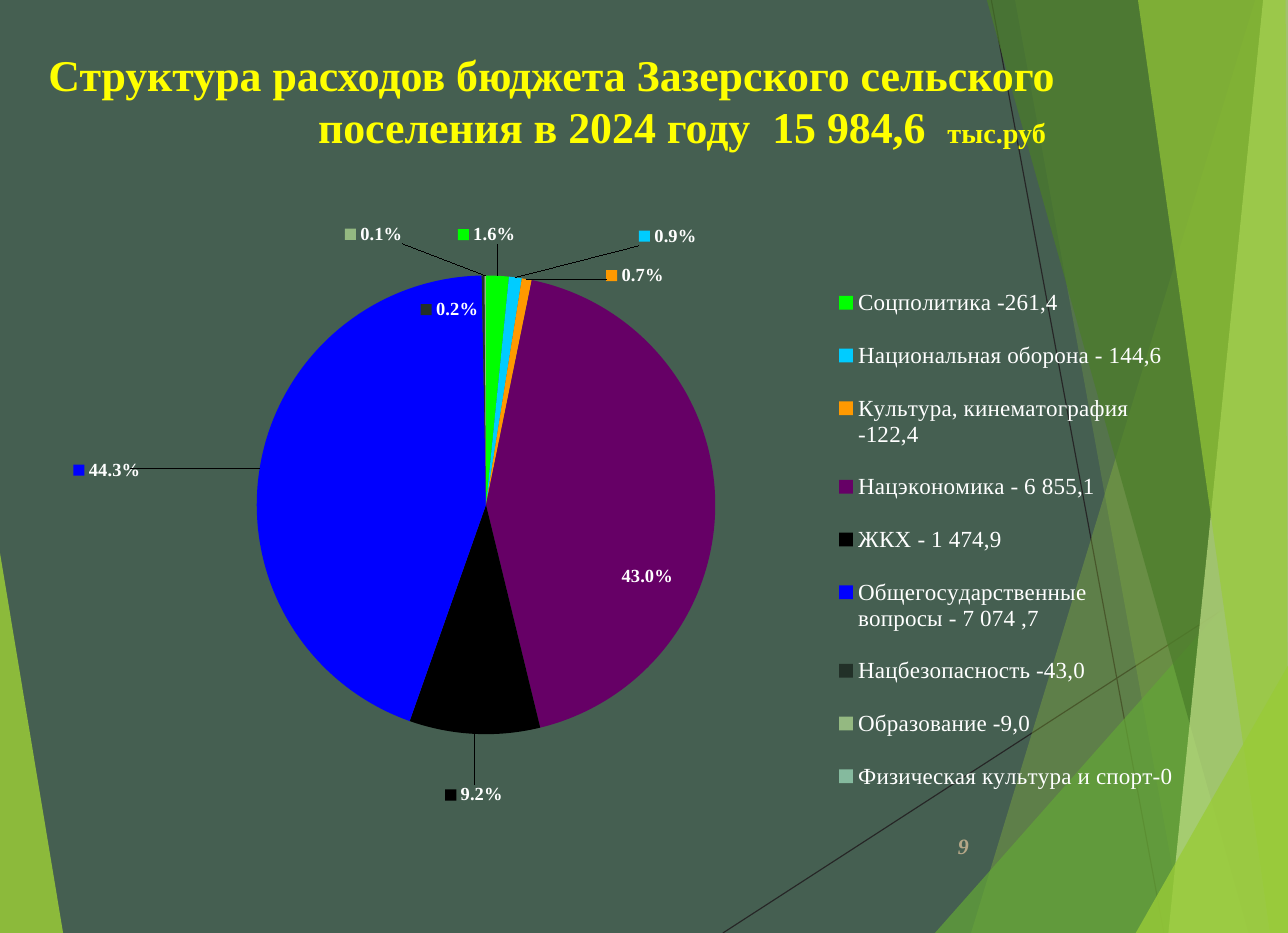
from dataclasses import dataclass

from lxml import etree
from pptx import Presentation
from pptx.chart.data import CategoryChartData
from pptx.dml.color import RGBColor
from pptx.enum import chart as ch, shapes, text
from pptx.oxml import ns, parse_xml
from pptx.util import Inches, Pt


@dataclass(frozen=True)
class Theme:
    font: str = "Times New Roman"
    back: str = "455F51"
    title: str = "FFFF00"
    body: str = "FFFFFF"
    number: str = "B5A788"
    line: str = "262626"
    title_size: float = 28
    unit_size: float = 18
    legend_size: float = 14.7
    label_size: float = 11.8
    number_size: float = 14


THEME = Theme()
WIDTH, HEIGHT = 11.42, 8.27

# Colour, opacity in percent, corners in inches
FACETS = [
    ("99CB38", 85, [(0, 4.9), (0.56, HEIGHT), (0, HEIGHT)]),
    ("99CB38", 30, [(11.13, 0), (8.61, HEIGHT), (WIDTH, HEIGHT), (WIDTH, 0)]),
    ("99CB38", 20, [(9, 0), (10.5, HEIGHT), (WIDTH, HEIGHT), (WIDTH, 0)]),
    ("63A537", 72, [(8.29, HEIGHT), (WIDTH, 4.73), (WIDTH, HEIGHT)]),
    ("4A7C29", 70, [(8.75, 0), (11.07, HEIGHT), (WIDTH, HEIGHT), (WIDTH, 0)]),
    ("C2E088", 70, [(11.2, 0), (10.36, HEIGHT), (WIDTH, HEIGHT), (WIDTH, 0)]),
    ("99CB38", 65, [(10.09, 0), (11.26, HEIGHT), (WIDTH, HEIGHT), (11.4, 0)]),
    ("99CB38", 80, [(10.07, HEIGHT), (WIDTH, 5.9), (WIDTH, HEIGHT)]),
]
RAYS = [((6.41, HEIGHT), (WIDTH, 5.03)), ((8.79, 0), (10.32, HEIGHT))]

# Name, share, colour, label shift as a part of the chart, key beside label
EXPENSES = [
    ("Соцполитика -261,4", 0.016, "00FF00", (-0.01, -0.04), 1),
    ("Национальная оборона - 144,6", 0.009, "00CCFF", (0.11, -0.04), 1),
    ("Культура, кинематография -122,4", 0.007, "FF9900", (0.07, 0.02), 1),
    ("Нацэкономика - 6 855,1", 0.43, "660066", (-0.09, 0.12), 0),
    ("ЖКХ - 1 474,9", 0.092, "000000", (0, 0.07), 1),
    ("Общегосударственные вопросы - 7 074 ,7", 0.443, "0000FF", (-0.11, 0.02), 1),
    ("Нацбезопасность -43,0", 0.002, "223028", (-0.03, 0.08), 1),
    ("Образование -9,0", 0.001, "94B981", (-0.1, -0.04), 1),
    ("Физическая культура и спорт-0", 0, "85BA9E", None, 0),
]


def style(font, size, color, bold=False, italic=False):
    font.name, font.size = THEME.font, Pt(size)
    font.bold, font.italic = bold, italic
    font.color.rgb = RGBColor.from_string(color)


def add_facets(page):
    for start, end in RAYS:
        ray = page.shapes.add_connector(
            shapes.MSO_CONNECTOR.STRAIGHT, *map(Inches, start + end))
        ray.line.color.rgb = RGBColor.from_string(THEME.line)
        ray.line.width = Pt(0.75)
        etree.SubElement(ray.element.spPr, ns.qn("a:effectLst"))
    for color, opacity, corners in FACETS:
        points = [(Inches(x), Inches(y)) for x, y in corners]
        builder = page.shapes.build_freeform(*points[0])
        builder.add_line_segments(points[1:])
        facet = builder.convert_to_shape()
        facet.shadow.inherit = False
        facet.line.fill.background()
        facet.fill.solid()
        facet.fill.fore_color.rgb = RGBColor.from_string(color)
        tint = facet.element.spPr.find(".//" + ns.qn("a:srgbClr"))
        etree.SubElement(tint, ns.qn("a:alpha"), val=str(opacity * 1000))


def add_title(page, left, top, width, height):
    title = page.shapes.title
    title.left, title.top = Inches(left), Inches(top)
    title.width, title.height = Inches(width), Inches(height)
    frame = title.text_frame
    frame.word_wrap = True
    frame.auto_size = text.MSO_AUTO_SIZE.NONE
    frame.vertical_anchor = text.MSO_ANCHOR.TOP
    frame.margin_left = frame.margin_right = Inches(0.11)
    frame.margin_top = frame.margin_bottom = Inches(0.06)
    frame.text = ("Структура расходов бюджета Зазерского сельского\n"
                  "поселения в 2024 году  15 984,6  ")
    for para in frame.paragraphs:
        para.alignment = text.PP_ALIGN.LEFT
        para.line_spacing = 1.0
        para.space_before = Pt(0)
        style(para.font, THEME.title_size, THEME.title, bold=True)
    second = frame.paragraphs[-1]
    indent = second._p.get_or_add_pPr()
    indent.set("marL", str(Inches(2.39)))
    indent.set("indent", "0")
    unit = second.add_run()
    unit.text = "тыс.руб"
    unit.font.size = Pt(THEME.unit_size)
    # Bring the title in front of the facets
    title.element.getparent().append(title.element)


def manual_layout(x, y, size=None, inner=False):
    """Place a chart part; with a size the place is absolute."""
    target = '<c:layoutTarget val="inner"/>' if inner else ""
    modes = '<c:xMode val="edge"/><c:yMode val="edge"/>' if size else ""
    extent = '<c:w val="%s"/><c:h val="%s"/>' % size if size else ""
    return parse_xml(
        f'<c:layout {ns.nsdecls("c")}><c:manualLayout>{target}{modes}'
        f'<c:x val="{x}"/><c:y val="{y}"/>{extent}</c:manualLayout></c:layout>')


def set_layout(element, layout, after=None):
    for old in element.findall(ns.qn("c:layout")):
        element.remove(old)
    if after is None:
        element.insert(0, layout)
    else:
        element.find(ns.qn(after)).addnext(layout)


def add_label(labels, index, shift, key):
    """Add the label of one slice, or hide it when it has no shift."""
    if shift is None:
        body = '<c:delete val="1"/>'
    else:
        flags = "".join(
            f'<c:show{name} val="{value}"/>' for name, value in
            (("LegendKey", key), ("Val", 1), ("CatName", 0), ("SerName", 0),
             ("Percent", 0), ("BubbleSize", 0)))
        body = f'<c:dLblPos val="outEnd"/>{flags}'
    label = parse_xml(
        f'<c:dLbl {ns.nsdecls("c")}><c:idx val="{index}"/>{body}</c:dLbl>')
    if shift is not None:
        set_layout(label, manual_layout(*shift), after="c:idx")
    labels.insert(index, label)


def add_expense_pie(page, left, top, width, height):
    data = CategoryChartData(number_format="0.0%")
    data.categories = [name for name, *_ in EXPENSES]
    data.add_series("Расходы", [share for _, share, *_ in EXPENSES])
    pie = page.shapes.add_chart(
        ch.XL_CHART_TYPE.PIE, *map(Inches, (left, top, width, height)), data).chart
    pie.has_title = False
    style(pie.font, THEME.legend_size, THEME.body)
    plot = pie.plots[0]
    plot.vary_by_categories = True
    set_layout(pie.element.find(".//" + ns.qn("c:plotArea")),
               manual_layout(0, 0.11, (0.74, 0.73), inner=True))

    # Legend
    pie.has_legend = True
    pie.legend.position = ch.XL_LEGEND_POSITION.RIGHT
    pie.legend.include_in_layout = False
    style(pie.legend.font, THEME.legend_size, THEME.body)
    set_layout(pie.legend._element, manual_layout(0.69, 0.09, (0.3, 0.88)),
               after="c:legendPos")

    # Slices and their labels
    series = plot.series[0]
    labels = series.data_labels
    labels.show_value = True
    labels.number_format = "0.0%"
    labels.number_format_is_linked = False
    labels.position = ch.XL_LABEL_POSITION.OUTSIDE_END
    style(labels.font, THEME.label_size, THEME.body, bold=True)
    for index, (_, _, color, shift, key) in enumerate(EXPENSES):
        fill = series.points[index].format.fill
        fill.solid()
        fill.fore_color.rgb = RGBColor.from_string(color)
        add_label(labels._element, index, shift, key)
    leader = labels._element.find(ns.qn("c:showLeaderLines"))
    if leader is None:
        leader = etree.SubElement(labels._element, ns.qn("c:showLeaderLines"))
    leader.set("val", "1")


def add_page_number(page, left, top, width, height):
    box = page.shapes.add_textbox(*map(Inches, (left, top, width, height)))
    frame = box.text_frame
    frame.word_wrap = True
    frame.vertical_anchor = text.MSO_ANCHOR.MIDDLE
    para = frame.paragraphs[0]
    para.text = "9"
    para.alignment = text.PP_ALIGN.RIGHT
    style(para.font, THEME.number_size, THEME.number, bold=True, italic=True)


def main():
    deck = Presentation()
    deck.slide_width, deck.slide_height = Inches(WIDTH), Inches(HEIGHT)
    page = deck.slides.add_slide(deck.slide_layouts[5])
    page.background.fill.solid()
    page.background.fill.fore_color.rgb = RGBColor.from_string(THEME.back)
    add_facets(page)
    add_page_number(page, 8.05, 7.28, 0.64, 0.44)
    add_expense_pie(page, 0.65, 1.83, 9.89, 5.57)
    add_title(page, 0.32, 0.36, 9.6, 1.06)
    deck.save("out.pptx")


if __name__ == "__main__":
    main()
